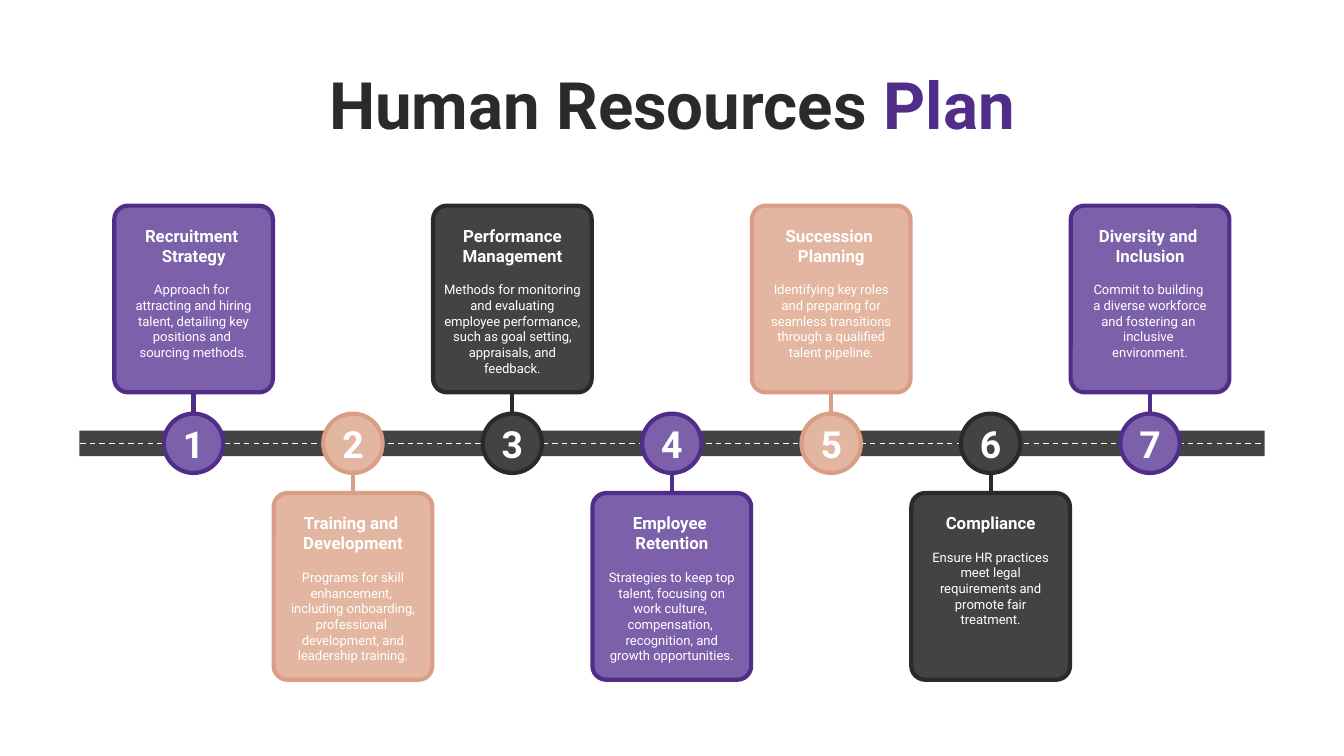
from dataclasses import dataclass
from itertools import cycle

from lxml.etree import SubElement
from pptx import Presentation
from pptx.dml.color import RGBColor
from pptx.enum.dml import MSO_LINE as Dash
from pptx.enum.shapes import MSO_CONNECTOR as Link, MSO_SHAPE as Kind
from pptx.enum.text import MSO_AUTO_SIZE as Fit, PP_ALIGN as Align
from pptx.oxml.ns import qn
from pptx.shapes.autoshape import Shape
from pptx.shapes.connector import Connector
from pptx.shapes.shapetree import SlideShapes
from pptx.text.text import TextFrame
from pptx.util import Pt

FONT = "Roboto"
WHITE = RGBColor(0xFF, 0xFF, 0xFF)
INK = RGBColor(0x2A, 0x2A, 0x29)
GREY = RGBColor(0x44, 0x43, 0x42)
ROAD = RGBColor(0x43, 0x43, 0x43)
PLUM = RGBColor(0x50, 0x2D, 0x88)
LILAC = RGBColor(0x7C, 0x60, 0xA9)
CLAY = RGBColor(0xDA, 0x9E, 0x86)
PEACH = RGBColor(0xE3, 0xB6, 0xA2)

# Lengths in points
MID_Y = 237.5
FIRST_X, PITCH = 103.7, 85.4
CARD_W, CARD_H = 85, 100
UPPER_Y, LOWER_Y = 110.2, 264.2
DISC = 31.8
EDGE = 2.25


@dataclass(frozen=True)
class Tone:
    fill: RGBColor
    edge: RGBColor


@dataclass(frozen=True)
class Step:
    head: str
    body: str
    lines: int = 2
    wide: float = 69.8


TONES = [Tone(LILAC, PLUM), Tone(PEACH, CLAY), Tone(GREY, INK)]

STEPS = [
    Step("Recruitment \nStrategy",
         "Approach for \nattracting and hiring talent, detailing key positions and \n"
         "sourcing methods."),
    Step("Training and \nDevelopment",
         "Programs for skill enhancement, \nincluding onboarding, professional \n"
         "development, and leadership training."),
    Step("Performance Management",
         "Methods for monitoring and evaluating employee performance, "
         "such as goal setting, appraisals, and feedback.", wide=74.2),
    Step("Employee \nRetention",
         "Strategies to keep top talent, focusing on work culture, \n"
         "compensation, \nrecognition, and growth opportunities."),
    Step("Succession \nPlanning",
         "Identifying key roles and preparing for seamless transitions "
         "through a qualified talent pipeline."),
    Step("Compliance",
         "Ensure HR practices meet legal requirements and promote fair treatment.",
         lines=1),
    Step("Diversity and \nInclusion",
         "Commit to building \na diverse workforce and fostering an \n"
         "inclusive \nenvironment."),
]


def add_text(shapes: SlideShapes, text: str, mid: float, top: float, wide: float,
             high: float, size: float, bold: bool = True) -> TextFrame:
    """Add a centred text box whose middle lies at mid."""
    box = shapes.add_textbox(Pt(mid - wide / 2), Pt(top), Pt(wide), Pt(high))
    frame = box.text_frame
    frame.margin_left = frame.margin_right = 0
    frame.margin_top = frame.margin_bottom = 0
    frame.word_wrap = True
    frame.auto_size = Fit.SHAPE_TO_FIT_TEXT
    frame.text = text
    for para in frame.paragraphs:
        para.alignment = Align.CENTER
        for run in para.runs:
            run.font.name = FONT
            run.font.size = Pt(size)
            run.font.bold = bold
            run.font.color.rgb = WHITE
    return frame


def add_block(shapes: SlideShapes, kind: Kind, mid: float, top: float, wide: float,
              high: float, fill: RGBColor, edge: RGBColor | None = None) -> Shape:
    block = shapes.add_shape(kind, Pt(mid - wide / 2), Pt(top), Pt(wide), Pt(high))
    block.shadow.inherit = False
    block.fill.solid()
    block.fill.fore_color.rgb = fill
    if edge is None:
        block.line.fill.background()
    else:
        block.line.color.rgb = edge
        block.line.width = Pt(EDGE)
    return block


def add_line(shapes: SlideShapes, x1: float, y1: float, x2: float, y2: float,
             color: RGBColor, width: float) -> Connector:
    line = shapes.add_connector(Link.STRAIGHT, Pt(x1), Pt(y1), Pt(x2), Pt(y2))
    line.line.color.rgb = color
    line.line.width = Pt(width)
    SubElement(line._element.spPr, qn("a:effectLst"))
    return line


def add_title(shapes: SlideShapes) -> None:
    frame = add_text(shapes, "Human Resources ", 360, 38.9, 618.5, 38, 35)
    para = frame.paragraphs[0]
    para.line_spacing = 0.9
    para.runs[0].font.color.rgb = INK
    last = para.add_run()
    last.text = "Plan"
    last.font.name = FONT
    last.font.size = Pt(35)
    last.font.bold = True
    last.font.color.rgb = PLUM


def add_road(shapes: SlideShapes) -> None:
    add_block(shapes, Kind.RECTANGLE, 360, MID_Y - 6.85, 635, 13.7, ROAD)
    lane = add_line(shapes, 43, MID_Y, 677.5, MID_Y, WHITE, 0.75)
    lane.line.dash_style = Dash.DASH


def add_step(shapes: SlideShapes, index: int, step: Step, tone: Tone) -> None:
    """Place a card above the road for even indexes, below it for odd ones."""
    mid = FIRST_X + index * PITCH
    upper = index % 2 == 0
    top = UPPER_Y if upper else LOWER_Y
    side = 2 if upper else 0
    stop = MID_Y - 12 if upper else MID_Y + 8

    card = add_block(shapes, Kind.ROUNDED_RECTANGLE, mid, top, CARD_W, CARD_H,
                     tone.fill, tone.edge)
    card.adjustments[0] = 0.087
    stem = add_line(shapes, mid, top, mid, stop, tone.edge, EDGE)
    stem.begin_connect(card, side)
    add_block(shapes, Kind.OVAL, mid, MID_Y - DISC / 2, DISC, DISC,
              tone.fill, tone.edge)
    add_text(shapes, str(index + 1), mid, MID_Y - 12.1, 32.4, 24.2, 20)

    high = 10.8 * step.lines
    add_text(shapes, step.head, mid, top + 10.5, 59, high, 9)
    add_text(shapes, step.body, mid, top + high + 19.2, step.wide, 42.5, 7, False)


def main() -> None:
    deck = Presentation()
    deck.slide_width, deck.slide_height = Pt(720), Pt(405)
    shapes = deck.slides.add_slide(deck.slide_layouts[6]).shapes
    add_title(shapes)
    add_road(shapes)
    for index, (step, tone) in enumerate(zip(STEPS, cycle(TONES))):
        add_step(shapes, index, step, tone)
    deck.save("out.pptx")


if __name__ == "__main__":
    main()
